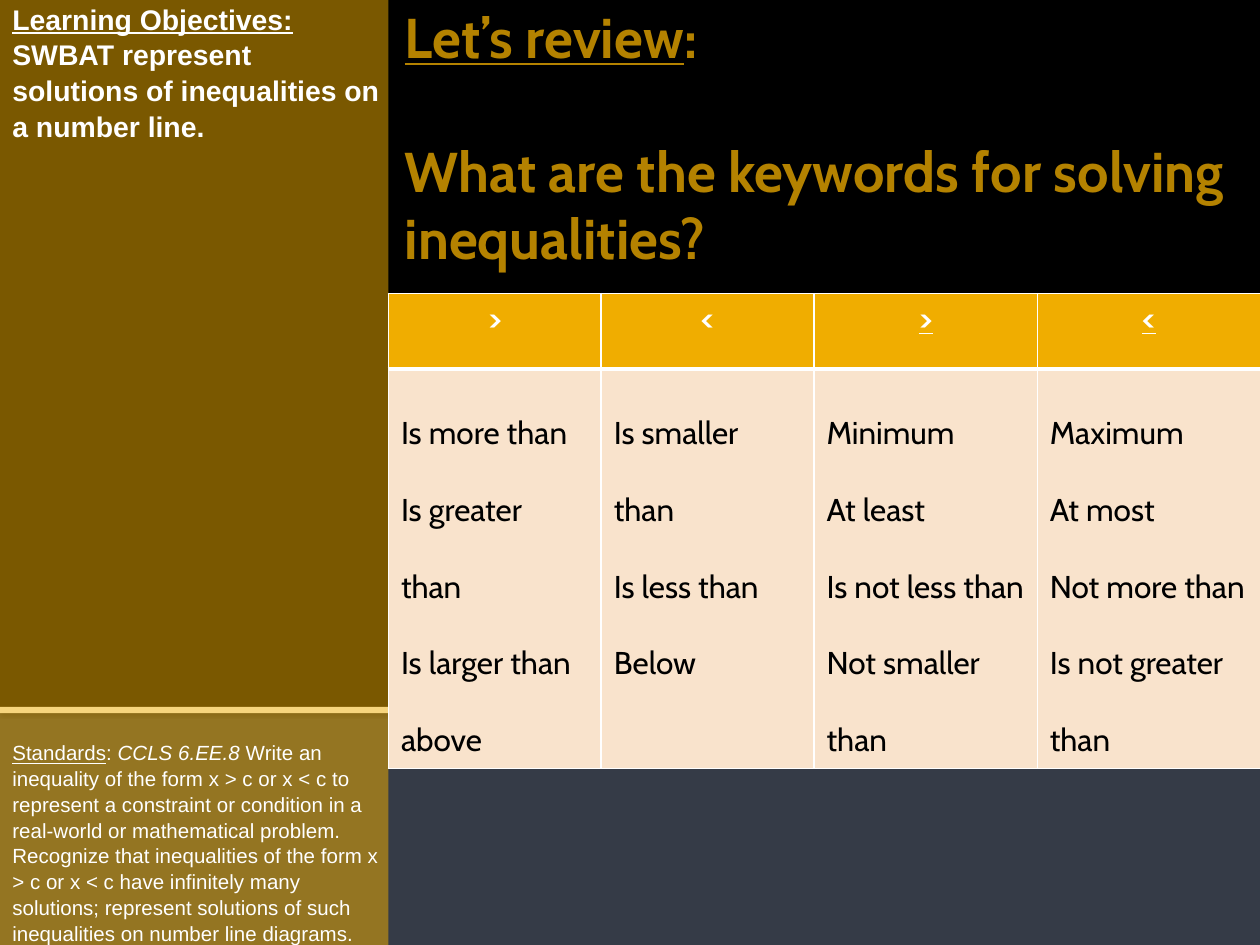
from lxml.etree import SubElement
from pptx import Presentation
from pptx.dml.color import RGBColor
from pptx.enum.shapes import MSO_SHAPE
from pptx.enum.text import MSO_ANCHOR, PP_ALIGN
from pptx.oxml.ns import qn
from pptx.util import Cm, Pt


def paint(target, color):
    """Give a fill a solid colour."""
    target.solid()
    target.fore_color.rgb = RGBColor.from_string(color)


def add_run(p, text, font, size, color, bold=False, italic=False, underline=False):
    r = p.add_run()
    r.text = text
    r.font.name, r.font.size = font, Pt(size)
    r.font.bold, r.font.italic, r.font.underline = bold, italic, underline
    paint(r.font.fill, color)


prs = Presentation()
prs.slide_width, prs.slide_height = Cm(25.4), Cm(19.05)
s = prs.slides.add_slide(prs.slide_layouts[6])
paint(s.background.fill, "353B47")

# Black area, white rule and translucent side panel
areas = [
    (25.4, 0, 14.27, "000000"),
    (25.4, 14.25, 0.13, "FFFFFF"),
    (7.83, 0, 19.05, "F0AD00"),
]
bands = []
for width, top, height, color in areas:
    sp = s.shapes.add_shape(MSO_SHAPE.RECTANGLE, 0, Cm(top), Cm(width), Cm(height))
    sp.shadow.inherit = False
    paint(sp.fill, color)
    sp.line.fill.background()
    bands.append(sp)
black, rule, panel = bands

# Soft shadow below the rule
effects = rule._element.spPr.find(qn("a:effectLst"))
shadow = SubElement(effects, qn("a:outerShdw"), blurRad=str(Pt(2.5)),
                    dist=str(Pt(0.8)), dir="5400000")
clr = SubElement(shadow, qn("a:srgbClr"), val="000000")
SubElement(clr, qn("a:alpha"), val="60000")

# Panel transparency
clr = panel._element.spPr.find(qn("a:solidFill")).find(qn("a:srgbClr"))
SubElement(clr, qn("a:alpha"), val="51000")

# Text blocks: left, top, width, height, left inset, line spacing, paragraphs
side, small = ("Arial", 16.2, "FFFFFF", True), ("Arial", 11.7, "FFFFFF", False)
title = ("Cabin", 32, "B48200", True)
blocks = [
    (0, 0, 7.83, 3.5, 0.25, 1.05, [[
        ("Learning Objectives: ", *side, False, True),
        ("SWBAT represent solutions of inequalities on a number line.", *side)]]),
    (0, 14.9, 7.83, 4.1, 0.25, 1.05, [[
        ("Standards", *small, False, True),
        (": ", *small),
        ("CCLS 6.EE.8 ", *small, True),
        ("Write an inequality of the form x > c or x < c to represent a "
         "constraint or condition in a real-world or mathematical problem. "
         "Recognize that inequalities of the form x > c or x < c have "
         "infinitely many solutions; represent solutions of such "
         "inequalities on number line diagrams.", *small)]]),
    (7.83, 0.05, 17.57, 5.6, 0.33, 1.0, [
        [("Let’s review", *title, False, True), (":", *title)],
        [("What are the keywords for solving inequalities?", *title)]]),
]
for left, top, width, height, inset, spacing, paragraphs in blocks:
    tf = s.shapes.add_textbox(Cm(left), Cm(top), Cm(width), Cm(height)).text_frame
    tf.word_wrap = True
    tf.vertical_anchor = MSO_ANCHOR.TOP
    tf.margin_left, tf.margin_right = Cm(inset), Cm(0.13)
    tf.margin_top = tf.margin_bottom = 0
    for i, runs in enumerate(paragraphs):
        p = tf.add_paragraph() if i else tf.paragraphs[0]
        p.line_spacing = spacing
        p.space_before = Pt(38 if i else 0)
        for run in runs:
            add_run(p, *run)

# Keyword table: symbol, underlined, width, keywords
columns = [
    (">", False, 4.29, ["Is more than", "Is greater than", "Is larger than", "above"]),
    ("<", False, 4.29, ["Is smaller than", "Is less than", "Below"]),
    (">", True, 4.5, ["Minimum", "At least", "Is not less than", "Not smaller than"]),
    ("<", True, 4.5, ["Maximum", "At most", "Not more than", "Is not greater than"]),
]
table = s.shapes.add_table(2, 4, Cm(7.83), Cm(5.92), Cm(17.58), Cm(9.57)).table
table.rows[0].height, table.rows[1].height = Cm(1.52), Cm(8.05)
for c, (symbol, underlined, width, keywords) in enumerate(columns):
    table.columns[c].width = Cm(width)
    head, body = table.cell(0, c), table.cell(1, c)

    # White borders, thicker between header and body
    for cell, color, thick in ((head, "F0AD00", "lnB"), (body, "F9E3CC", "lnT")):
        tcPr = cell._tc.get_or_add_tcPr()
        for edge in ("lnL", "lnR", "lnT", "lnB"):
            ln = SubElement(tcPr, qn(f"a:{edge}"), w=str(Pt(3 if edge == thick else 1)))
            SubElement(SubElement(ln, qn("a:solidFill")), qn("a:srgbClr"), val="FFFFFF")
        paint(cell.fill, color)

    p = head.text_frame.paragraphs[0]
    p.alignment = PP_ALIGN.CENTER
    add_run(p, symbol, "Cabin", 18, "FFFFFF", True, False, underlined)
    tf = body.text_frame
    for i, keyword in enumerate(keywords):
        p = tf.add_paragraph() if i else tf.paragraphs[0]
        p.line_spacing = 2.0
        add_run(p, keyword, "Cabin", 18, "000000")

prs.save("out.pptx")
